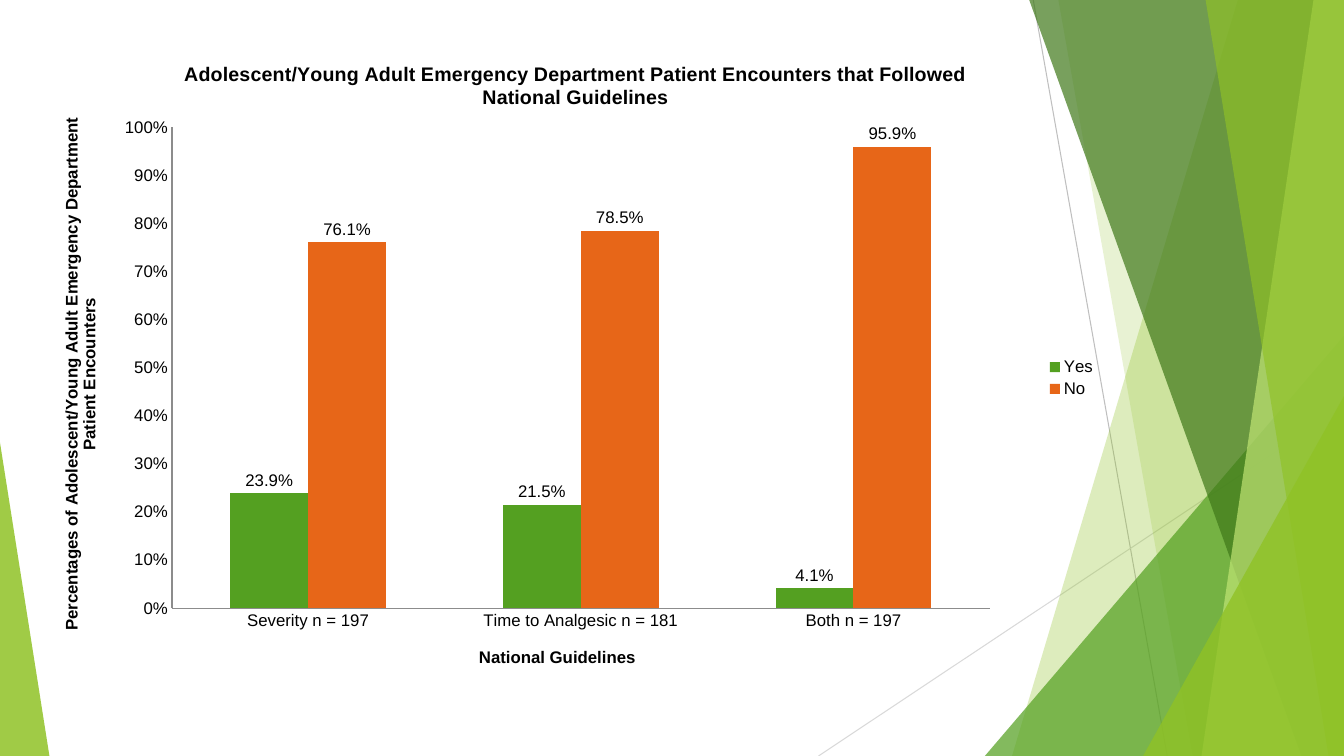
from lxml.etree import SubElement
from pptx import Presentation
from pptx.chart.data import CategoryChartData
from pptx.dml.color import RGBColor
from pptx.enum.chart import XL_CHART_TYPE, XL_LABEL_POSITION, XL_LEGEND_POSITION, XL_TICK_MARK
from pptx.enum.shapes import MSO_CONNECTOR, MSO_SHAPE
from pptx.oxml import parse_xml
from pptx.oxml.ns import nsdecls, qn
from pptx.util import Inches, Pt

WIDTH, HEIGHT = Inches(13.33), Inches(7.5)
BLACK = RGBColor(0x00, 0x00, 0x00)
AXIS_GRAY = RGBColor(0x8C, 0x8C, 0x8C)
LINE_GRAY = RGBColor(0xBF, 0xBF, 0xBF)
PALE_GRAY = RGBColor(0xD9, 0xD9, 0xD9)
LIME = RGBColor(0x90, 0xC2, 0x26)
PALE_LIME = RGBColor(0xC0, 0xE4, 0x74)
GREEN = RGBColor(0x54, 0xA0, 0x21)
DARK_GREEN = RGBColor(0x3F, 0x78, 0x19)
ORANGE = RGBColor(0xE7, 0x66, 0x18)

BODY_FONT = {"name": "Arial", "size": Pt(12), "bold": False}
AXIS_TITLE_FONT = {"name": "Arial", "size": Pt(12), "bold": True}
TITLE_FONT = {"name": "Arial", "size": Pt(14), "bold": True}

RAYS = [
    ((76.88, 0), (86.85, 100), LINE_GRAY),
    ((100, 53.73), (60.9, 100), PALE_GRAY),
]
FACETS = [
    ("slab", (92.1, 75.3), LIME, 30),
    ("slab", (78.75, 88.73), LIME, 20),
    ("triangle", (73.28, 44.4, 26.72, 1), GREEN, 72),
    ("slab", (76.58, 96.83), DARK_GREEN, 70),
    ("slab", (97.73, 89.4), PALE_LIME, 70),
    ("slab", (89.7, 98.85), LIME, 65),
    ("triangle", (85.05, 52.4, 14.95, 1), LIME, 80),
    ("triangle", (0, 58.53, 3.68, 0), LIME, 85),
]
CHART_BOX = (3.3, 5.2, 79.05, 89.6)
PLOT_LAYOUT = {"x": 0.12, "y": 0.13, "w": 0.77, "h": 0.71}
CATEGORIES = ["Severity n = 197", "Time to Analgesic n = 181", "Both n = 197"]
SERIES = [
    ("Yes", (0.239, 0.215, 0.041), GREEN),
    ("No", (0.761, 0.785, 0.959), ORANGE),
]


def across(percent):
    return round(WIDTH * percent / 100)


def down(percent):
    return round(HEIGHT * percent / 100)


def format_font(font, values):
    for name, value in values.items():
        setattr(font, name, value)
    font.color.rgb = BLACK


def add_slab(shapes, top, bottom):
    builder = shapes.build_freeform(across(top), 0)
    corners = [(100, 0), (100, 100), (bottom, 100)]
    builder.add_line_segments([(across(x), down(y)) for x, y in corners])
    return builder.convert_to_shape()


def add_triangle(shapes, left, top, width, apex):
    shape = shapes.add_shape(MSO_SHAPE.ISOSCELES_TRIANGLE, across(left), down(top),
                             across(width), down(100 - top))
    shape.adjustments[0] = apex
    return shape


def add_backdrop(shapes):
    for (x1, y1), (x2, y2), color in RAYS:
        ray = shapes.add_connector(MSO_CONNECTOR.STRAIGHT, across(x1), down(y1),
                                   across(x2), down(y2))
        ray.line.color.rgb = color
        ray.line.width = Pt(0.75)
        SubElement(ray._element.spPr, qn("a:effectLst"))
    builders = {"slab": add_slab, "triangle": add_triangle}
    for kind, geometry, color, opacity in FACETS:
        shape = builders[kind](shapes, *geometry)
        shape.shadow.inherit = False
        shape.line.fill.background()
        shape.fill.solid()
        shape.fill.fore_color.rgb = color
        fill_color = shape._element.spPr.find(qn("a:solidFill"))[0]
        SubElement(fill_color, qn("a:alpha"), val=str(opacity * 1000))


def set_title(owner, text, font_values):
    frame = owner.text_frame
    frame.text = text
    format_font(frame.paragraphs[0].runs[0].font, font_values)


def format_axis(axis, title):
    axis.has_major_gridlines = False
    axis.major_tick_mark = XL_TICK_MARK.NONE
    axis.minor_tick_mark = XL_TICK_MARK.NONE
    axis.format.line.color.rgb = AXIS_GRAY
    axis.format.line.width = Pt(1)
    format_font(axis.tick_labels.font, BODY_FONT)
    set_title(axis.axis_title, title, AXIS_TITLE_FONT)


def place_plot(chart):
    plot_area = chart._chartSpace.chart.plotArea
    for layout in plot_area.findall(qn("c:layout")):
        plot_area.remove(layout)
    modes = '<c:layoutTarget val="inner"/><c:xMode val="edge"/><c:yMode val="edge"/>'
    sizes = "".join(f'<c:{name} val="{value}"/>' for name, value in PLOT_LAYOUT.items())
    plot_area.insert(0, parse_xml(
        f'<c:layout {nsdecls("c")}><c:manualLayout>{modes}{sizes}</c:manualLayout></c:layout>'))


def add_guideline_chart(shapes, left, top, width, height):
    data = CategoryChartData(number_format="0.0%")
    data.categories = CATEGORIES
    for name, values, _ in SERIES:
        data.add_series(name, values)
    chart = shapes.add_chart(XL_CHART_TYPE.COLUMN_CLUSTERED, across(left), down(top),
                             across(width), down(height), data).chart
    format_font(chart.font, {"name": "Cabin", "size": Pt(10)})
    chart.has_title = True
    set_title(chart.chart_title, "Adolescent/Young Adult Emergency Department Patient "
              "Encounters that Followed National Guidelines", TITLE_FONT)
    chart.chart_title.include_in_layout = False

    format_axis(chart.category_axis, "National Guidelines")
    format_axis(chart.value_axis, "Percentages of Adolescent/Young Adult Emergency "
                "Department Patient Encounters")
    chart.value_axis.minimum_scale = 0
    chart.value_axis.maximum_scale = 1
    chart.value_axis.major_unit = 0.1
    chart.value_axis.tick_labels.number_format = "0%"
    chart.value_axis.tick_labels.number_format_is_linked = False

    chart.has_legend = True
    chart.legend.position = XL_LEGEND_POSITION.RIGHT
    chart.legend.include_in_layout = False
    format_font(chart.legend.font, BODY_FONT)

    plot = chart.plots[0]
    plot.gap_width = 150
    plot.overlap = 0
    plot.vary_by_categories = False
    for series, (_, _, color) in zip(plot.series, SERIES):
        series.format.fill.solid()
        series.format.fill.fore_color.rgb = color
        labels = series.data_labels
        labels.show_value = True
        labels.number_format = "0.0%"
        labels.number_format_is_linked = False
        labels.position = XL_LABEL_POSITION.OUTSIDE_END
        format_font(labels.font, BODY_FONT)
    place_plot(chart)


def main():
    presentation = Presentation()
    presentation.slide_width, presentation.slide_height = WIDTH, HEIGHT
    slide = presentation.slides.add_slide(presentation.slide_layouts[6])
    add_backdrop(slide.shapes)
    add_guideline_chart(slide.shapes, *CHART_BOX)
    presentation.save("out.pptx")


if __name__ == "__main__":
    main()
